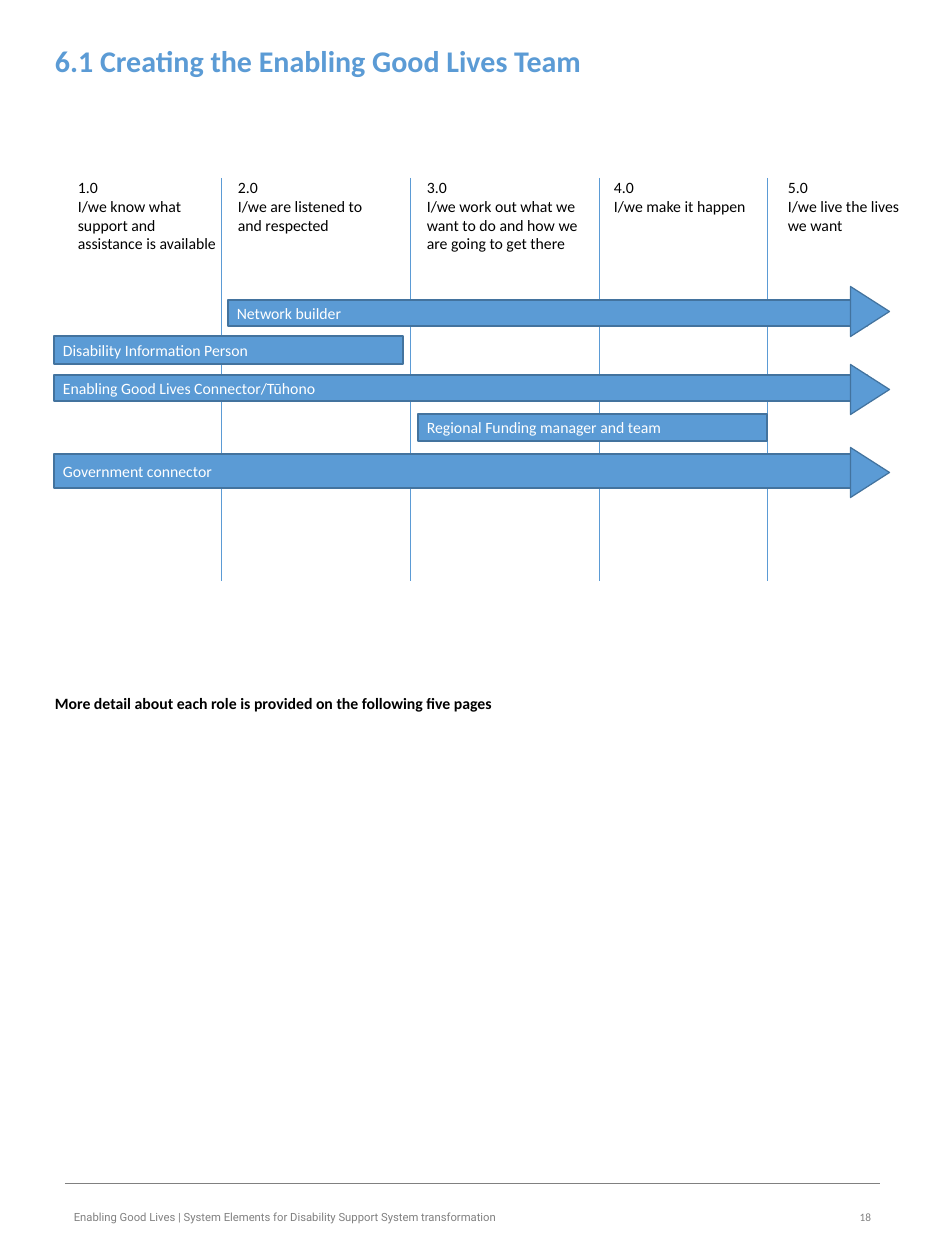
"""Build the Enabling Good Lives team slide: roles laid across five stages."""
from lxml import etree
from pptx import Presentation
from pptx.dml.color import RGBColor
from pptx.enum.shapes import MSO_CONNECTOR, MSO_SHAPE
from pptx.enum.text import MSO_ANCHOR, PP_ALIGN
from pptx.oxml.ns import qn
from pptx.util import Pt

PX = 10160
BLUE = RGBColor(0x5B, 0x9B, 0xD5)
EDGE = RGBColor(0x43, 0x73, 0x9E)
GREY = RGBColor(0x80, 0x80, 0x80)
BLACK = RGBColor(0, 0, 0)
WHITE = RGBColor(255, 255, 255)
STRAIGHT = MSO_CONNECTOR.STRAIGHT
RECTANGLE, TRIANGLE = MSO_SHAPE.RECTANGLE, MSO_SHAPE.ISOSCELES_TRIANGLE
TOP, MIDDLE = MSO_ANCHOR.TOP, MSO_ANCHOR.MIDDLE
LEFT, RIGHT = PP_ALIGN.LEFT, PP_ALIGN.RIGHT
BODY = 12.6

deck = Presentation()
deck.slide_width, deck.slide_height = 945 * PX, 1260 * PX
page = deck.slides.add_slide(deck.slide_layouts[6])


def write(box, lines, color, size=BODY, bold=False, font="Calibri", anchor=TOP, align=LEFT):
    frame = box.text_frame
    frame.word_wrap = True
    frame.vertical_anchor = anchor
    para = frame.paragraphs[0]
    para.alignment = align
    for index, line in enumerate(lines):
        if index:
            para.add_line_break()
        span = para.add_run()
        span.text = line
        span.font.name = font
        span.font.size = Pt(size)
        span.font.bold = bold
        span.font.color.rgb = color


def add_block(kind, left, top, width, height):
    block = page.shapes.add_shape(kind, left * PX, top * PX, width * PX, height * PX)
    block.shadow.inherit = False
    block.fill.solid()
    block.fill.fore_color.rgb = BLUE
    block.line.color.rgb = EDGE
    block.line.width = Pt(1)
    return block


rules = [(65, 1183, 880, 1183, GREY, 0.25)]
rules += [(x, 178, x, 581, BLUE, 0.5) for x in (221, 410, 599, 767)]
for x1, y1, x2, y2, color, weight in rules:
    rule = page.shapes.add_connector(STRAIGHT, x1 * PX, y1 * PX, x2 * PX, y2 * PX)
    rule.line.color.rgb = color
    rule.line.width = Pt(weight)
    etree.SubElement(rule._element.spPr, qn("a:effectLst"))

stages = [
    (69, 158, 104, "I/we know what support and assistance is available"),
    (229, 166, 67, "I/we are listened to and respected"),
    (418, 178, 86, "I/we work out what we want to do and how we are going to get there"),
    (605, 150, 48, "I/we make it happen"),
    (779, 150, 67, "I/we live the lives we want"),
]
for number, (left, width, height, wish) in enumerate(stages, 1):
    box = page.shapes.add_textbox(left * PX, 173 * PX, width * PX, height * PX)
    write(box, [f"{number}.0 ", wish], BLACK)

roles = [
    (54, 375, 813, 26, "Enabling Good Lives Connector/Tūhono"),
    (228, 300, 639, 26, "Network builder"),
    (54, 336, 349, 28, "Disability Information Person"),
    (418, 414, 349, 27, "Regional Funding manager and team"),
    (54, 454, 797, 34, "Government connector"),
]
for left, top, width, height, role in roles:
    bar = add_block(RECTANGLE, left, top, width, height)
    write(bar, [role], WHITE, anchor=MIDDLE)

for top in (292, 370, 453):
    arrowhead = add_block(TRIANGLE, 845, top, 50, 39)
    arrowhead.rotation = 90

title = page.shapes.add_textbox(46 * PX, 38 * PX, 861 * PX, 45 * PX)
write(title, ["6.1 Creating the Enabling Good Lives Team"], BLUE, size=24, bold=True)

note = page.shapes.add_textbox(46 * PX, 689 * PX, 517 * PX, 48 * PX)
write(note, ["More detail about each role is provided on the following five pages"], BLACK, bold=True)

page_number = page.shapes.add_textbox(668 * PX, 1183 * PX, 212 * PX, 67 * PX)
write(page_number, ["18"], GREY, size=9, anchor=MIDDLE, align=RIGHT)

footer = page.shapes.add_textbox(65 * PX, 1183 * PX, 560 * PX, 67 * PX)
write(footer, ["Enabling Good Lives | System Elements for Disability Support System transformation"],
      GREY, size=9, font="Roboto", anchor=MIDDLE)

deck.save("out.pptx")
